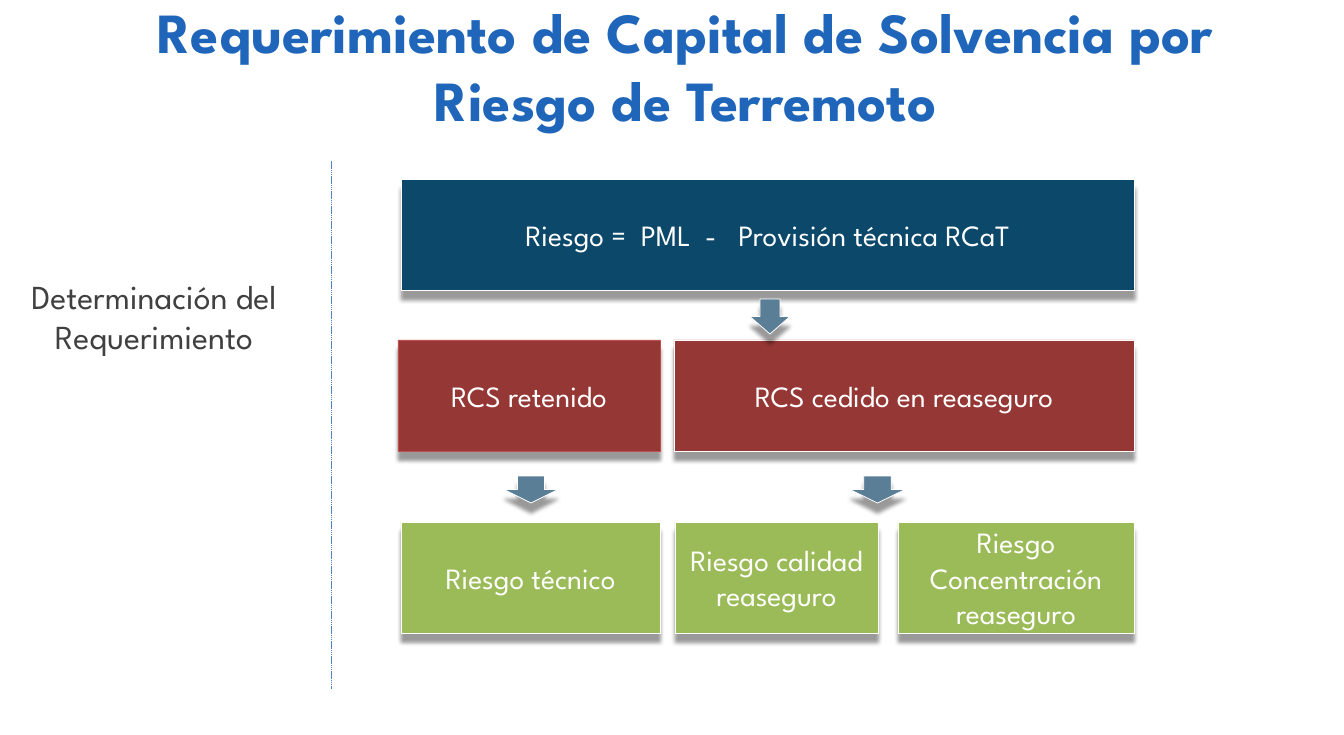
from lxml import etree
from pptx import Presentation
from pptx.dml.color import RGBColor
from pptx.enum.dml import MSO_LINE
from pptx.enum.shapes import MSO_CONNECTOR, MSO_SHAPE
from pptx.enum.text import MSO_ANCHOR, MSO_AUTO_SIZE, PP_ALIGN
from pptx.oxml.ns import qn
from pptx.util import Pt

PX = 914400 / 75.6
FONT = "League Spartan"
RECT, ARROW = MSO_SHAPE.RECTANGLE, MSO_SHAPE.DOWN_ARROW
LINE, DASH = MSO_CONNECTOR.STRAIGHT, MSO_LINE.SQUARE_DOT
TOP, MIDDLE = MSO_ANCHOR.TOP, MSO_ANCHOR.MIDDLE
CENTER, NO_FIT = PP_ALIGN.CENTER, MSO_AUTO_SIZE.NONE

WHITE = RGBColor(0xFF, 0xFF, 0xFF)
BLUE = RGBColor(0x1F, 0x66, 0xBA)
GREY = RGBColor(0x40, 0x40, 0x40)
NAVY = RGBColor(0x0B, 0x48, 0x6A)
RED = RGBColor(0x95, 0x37, 0x35)
BRICK = RGBColor(0xC0, 0x50, 0x4D)
GREEN = RGBColor(0x9B, 0xBB, 0x59)
STEEL = RGBColor(0x5A, 0x7E, 0x96)
AZURE = RGBColor(0x4F, 0x81, 0xBD)

BOX_H = 111
ROWS = [  # top, fill, boxes as (left, width, text, edge)
    (179, NAVY, [(401, 733, "Riesgo =  PML  -   Provisión técnica RCaT", WHITE)]),
    (340, RED, [(398, 262, "RCS retenido", BRICK),
                (674, 460, "RCS cedido en reaseguro", WHITE)]),
    (522, GREEN, [(401, 259, "Riesgo técnico", WHITE),
                  (675, 203, "Riesgo calidad reaseguro", WHITE),
                  (898, 236, "Riesgo Concentración reaseguro", WHITE)]),
]
ARROWS = [(750, 299, 40, 35), (504, 476, 54, 27), (850, 476, 55, 27)]


def px(*sizes):
    return [round(size * PX) for size in sizes]


def write(frame, text, size, color, bold=False):
    """Put one centred run into the first paragraph."""
    frame.word_wrap = True
    para = frame.paragraphs[0]
    para.alignment = CENTER
    run = para.add_run()
    run.text = text
    font = run.font
    font.name, font.size, font.bold = FONT, Pt(size), bold
    font.color.rgb = color


def place(holder, left, top, width, height):
    holder.left, holder.top, holder.width, holder.height = px(
        left, top, width, height)


def pad(frame, side, top, bottom):
    frame.margin_left = frame.margin_right = px(side)[0]
    frame.margin_top, frame.margin_bottom = px(top, bottom)


def add_shade(shape, blur, dist, alpha):
    """Cast a black shadow straight down."""
    effects = etree.SubElement(shape.element.spPr, qn("a:effectLst"))
    shade = etree.SubElement(
        effects, qn("a:outerShdw"), blurRad=str(Pt(blur)), dist=str(Pt(dist)),
        dir="5400000", rotWithShape="0")
    color = etree.SubElement(shade, qn("a:srgbClr"), val="000000")
    etree.SubElement(color, qn("a:alpha"), val=str(alpha * 1000))


def add_block(slide, kind, bounds, fill, edge=WHITE):
    shape = slide.shapes.add_shape(kind, *px(*bounds))
    shape.fill.solid()
    shape.fill.fore_color.rgb = fill
    shape.line.color.rgb = edge
    shape.line.width = Pt(0.75)
    add_shade(shape, 4, 9, 40)
    return shape


def add_box(slide, bounds, fill, edge, text):
    frame = add_block(slide, RECT, bounds, fill, edge).text_frame
    frame.vertical_anchor = MIDDLE
    write(frame, text, 28, WHITE)


def add_rule(slide, x, top, bottom):
    rule = slide.shapes.add_connector(LINE, *px(x, top, x, bottom))
    rule.line.color.rgb = AZURE
    rule.line.width = Pt(0.5)
    rule.line.dash_style = DASH
    add_shade(rule, 3.1, 1.6, 38)


def set_title(holder, text):
    place(holder, 113, 21, 1145, 88)
    frame = holder.text_frame
    frame.auto_size = NO_FIT
    frame.vertical_anchor = MIDDLE
    pad(frame, 10, 5, 5)
    write(frame, text, 54, BLUE, True)


def set_body(holder, text):
    place(holder, 12, 175, 284, 487)
    frame = holder.text_frame
    frame.auto_size = NO_FIT
    frame.vertical_anchor = TOP
    pad(frame, 12, 101, 6)
    para = frame.paragraphs[0]
    props = para._p.get_or_add_pPr()
    props.set("marL", "0")
    props.set("indent", "0")
    etree.SubElement(props, qn("a:buNone"))
    para.space_before = Pt(0)
    write(frame, text, 32, GREY)


def main():
    deck = Presentation()
    deck.slide_width, deck.slide_height = px(1344, 735)
    slide = deck.slides.add_slide(deck.slide_layouts[1])
    title, body = slide.placeholders
    set_title(title,
              "Requerimiento de Capital de Solvencia por Riesgo de Terremoto")
    set_body(body, "Determinación del Requerimiento")
    add_rule(slide, 331, 161, 689)
    for top, fill, boxes in ROWS:
        for left, width, text, edge in boxes:
            add_box(slide, (left, top, width, BOX_H), fill, edge, text)
    for bounds in ARROWS:
        add_block(slide, ARROW, bounds, STEEL)
    deck.save("out.pptx")


if __name__ == "__main__":
    main()
